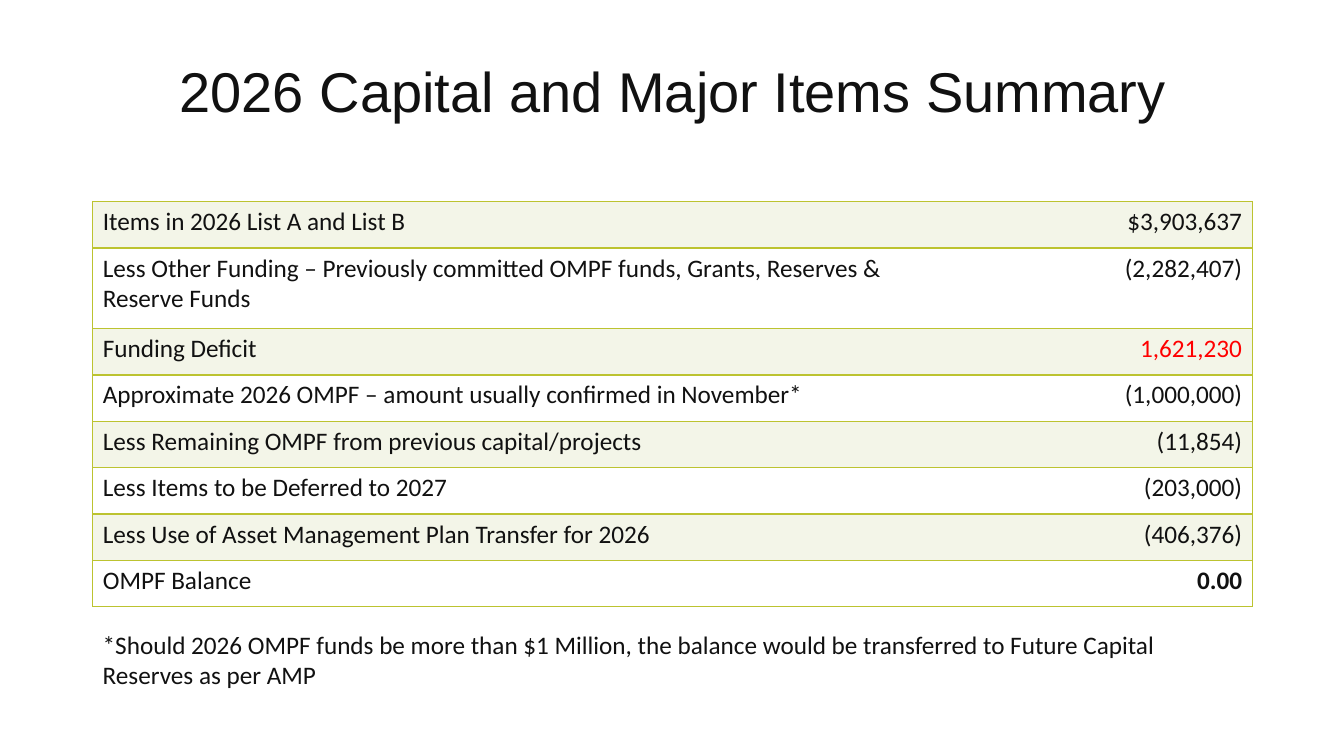
"""Builds the 2026 capital and major items summary slide."""
from pptx import Presentation
from pptx.dml.color import RGBColor
from pptx.enum import text
from pptx.oxml import parse_xml
from pptx.oxml.ns import nsdecls
from pptx.util import Inches, Pt

INK = RGBColor(0x11, 0x11, 0x11)
RED = RGBColor(0xFF, 0x00, 0x00)
WHITE = RGBColor(0xFF, 0xFF, 0xFF)
BAND = RGBColor(0xF3, 0xF5, 0xE8)
RULE = RGBColor(0xBC, 0xC3, 0x30)

ITEMS = [
    ("Items in 2026 List A and List B", "$3,903,637"),
    ("Less Other Funding – Previously committed OMPF funds, Grants, Reserves & Reserve Funds",
     "(2,282,407)"),
    ("Funding Deficit", "1,621,230"),
    ("Approximate 2026 OMPF – amount usually confirmed in November*", "(1,000,000)"),
    ("Less Remaining OMPF from previous capital/projects", "(11,854)"),
    ("Less Items to be Deferred to 2027", "(203,000)"),
    ("Less Use of Asset Management Plan Transfer for 2026", "(406,376)"),
    ("OMPF Balance", "0.00"),
]
WRAPPED_ROW, DEFICIT_ROW, BALANCE_ROW = 1, 2, 7
FOOTNOTE = ("*Should 2026 OMPF funds be more than $1 Million, the balance would be "
            "transferred to Future Capital Reserves as per AMP")


def style(paragraph, size=18, name="Calibri", color=INK):
    """Set the font of a whole paragraph."""
    font = paragraph.font
    font.size, font.name = Pt(size), name
    font.color.rgb = color


def add_borders(cell, ruled_sides):
    """Rule the named sides of a cell and clear the others."""
    properties = cell._tc.get_or_add_tcPr()
    for side in "LRTB":
        paint = (f'<a:solidFill><a:srgbClr val="{RULE}"/></a:solidFill>'
                 if side in ruled_sides else "<a:noFill/>")
        properties.append(parse_xml(
            f'<a:ln{side} {nsdecls("a")} w="{Pt(1)}">{paint}</a:ln{side}>'))


def place_title(slide, left, top, width, height):
    """Fill and place the title."""
    title = slide.shapes.title
    title.left, title.top, title.width, title.height = left, top, width, height
    title.text_frame.text = "2026 Capital and Major Items Summary"
    title.text_frame.vertical_anchor = text.MSO_ANCHOR.MIDDLE
    heading = title.text_frame.paragraphs[0]
    heading.alignment = text.PP_ALIGN.CENTER
    heading.line_spacing = 0.9
    style(heading, 40, "Arial")


def add_summary(slide, left, top, width, height):
    """Add the banded table of items and amounts."""
    summary = slide.shapes.add_table(len(ITEMS), 2, left, top, width, height).table
    summary.first_row = summary.horz_banding = False
    summary.columns[1].width = Inches(2.78)
    summary.columns[0].width = width - Inches(2.78)
    for index, item in enumerate(ITEMS):
        summary.rows[index].height = Inches(0.8 if index == WRAPPED_ROW else 0.46)
        for column, wording in enumerate(item):
            cell = summary.cell(index, column)
            add_borders(cell, "RTB" if column else "LTB")
            cell.fill.solid()
            cell.fill.fore_color.rgb = WHITE if index % 2 else BAND
            cell.text = wording
            style(cell.text_frame.paragraphs[0])
        amount = cell.text_frame.paragraphs[0]
        amount.alignment = text.PP_ALIGN.RIGHT
        if index == DEFICIT_ROW:
            amount.font.color.rgb = RED
        amount.font.bold = index == BALANCE_ROW


def add_footnote(slide, left, top, width, height):
    """Add the note below the table."""
    frame = slide.shapes.add_textbox(left, top, width, height).text_frame
    frame.word_wrap = True
    frame.auto_size = text.MSO_AUTO_SIZE.SHAPE_TO_FIT_TEXT
    frame.text = FOOTNOTE
    style(frame.paragraphs[0])


def main():
    """Build and save the slide."""
    deck = Presentation()
    deck.slide_width, deck.slide_height = Inches(13.33), Inches(7.5)
    slide = deck.slides.add_slide(deck.slide_layouts[5])
    left, width = Inches(0.92), Inches(11.5)
    place_title(slide, left, Inches(0.4), width, Inches(1.08))
    add_summary(slide, left, Inches(2), width, Inches(4.02))
    add_footnote(slide, left, Inches(6.19), Inches(11.58), Inches(0.71))
    deck.save("out.pptx")


if __name__ == "__main__":
    main()
